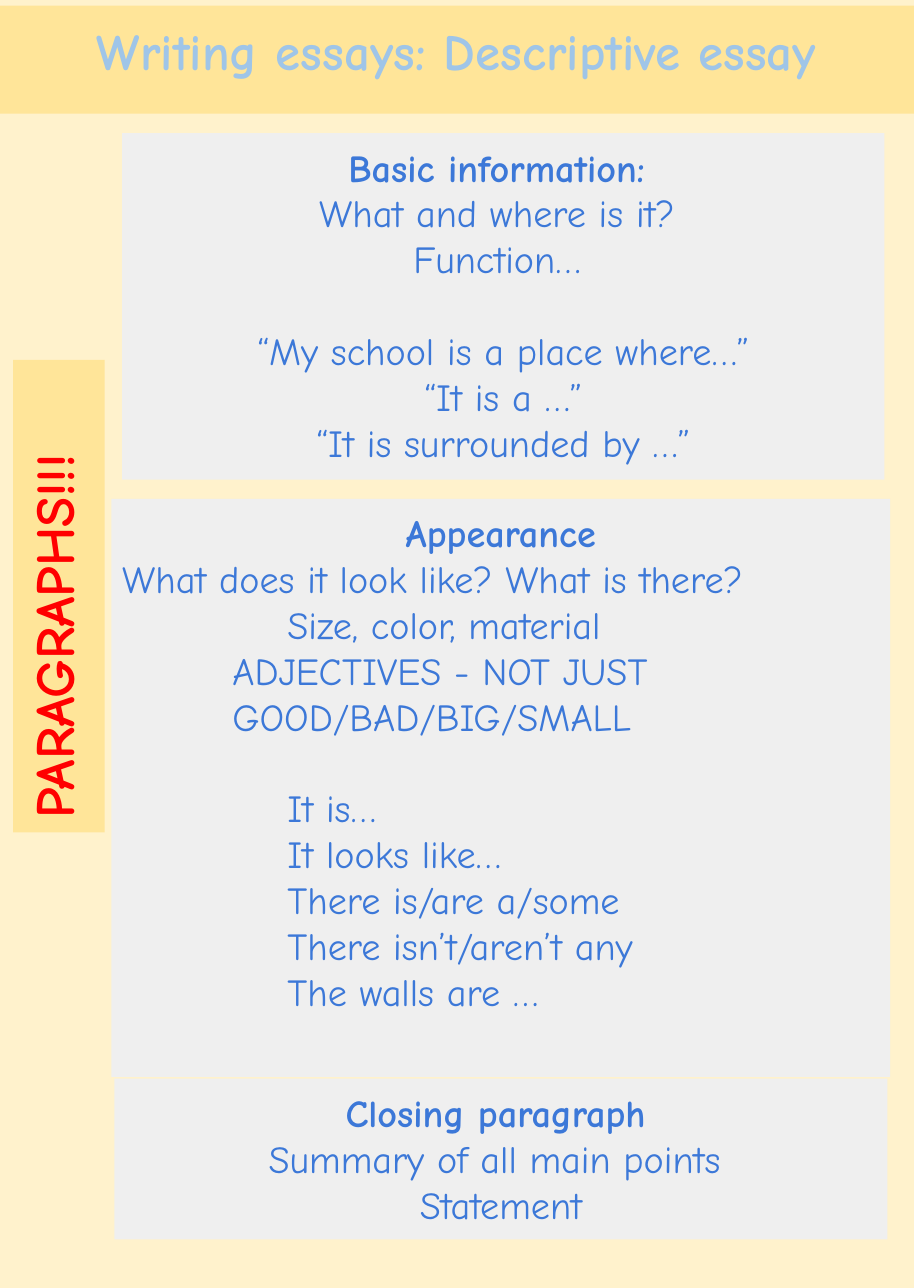
"""Build a one-page guide to writing a descriptive essay."""
import pptx
import pptx.dml.color
import pptx.enum.shapes
import pptx.enum.text
import pptx.util

Cm = pptx.util.Cm
Pt = pptx.util.Pt
RGBColor = pptx.dml.color.RGBColor
CENTER = pptx.enum.text.PP_ALIGN.CENTER
LEFT = pptx.enum.text.PP_ALIGN.LEFT

CREAM = RGBColor(0xFF, 0xF2, 0xCC)
YELLOW = RGBColor(0xFF, 0xE5, 0x99)
GREY = RGBColor(0xEF, 0xEF, 0xEF)
LIGHT_BLUE = RGBColor(0x9F, 0xC5, 0xE8)
BLUE = RGBColor(0x3C, 0x78, 0xD8)
RED = RGBColor(0xFF, 0x00, 0x00)

FONT = "Comic Neue"
BODY_SIZE = 25
BLANK_LINE = Pt(30)
TAB = Cm(1.27)


def fill_solid(shape, color):
    shape.fill.solid()
    shape.fill.fore_color.rgb = color


def set_frame(shape, inset):
    frame = shape.text_frame
    frame.word_wrap = True
    frame.auto_size = pptx.enum.text.MSO_AUTO_SIZE.NONE
    frame.vertical_anchor = pptx.enum.text.MSO_ANCHOR.TOP
    frame.margin_left = frame.margin_right = inset
    frame.margin_top = frame.margin_bottom = inset
    return frame


def add_run(paragraph, text, size, color, bold=False):
    run = paragraph.add_run()
    run.text = text
    run.font.name = FONT
    run.font.size = Pt(size)
    run.font.bold = bold
    run.font.color.rgb = color


def add_box(slide, box, color):
    rectangle = pptx.enum.shapes.MSO_SHAPE.RECTANGLE
    shape = slide.shapes.add_shape(rectangle, *map(Cm, box))
    shape.shadow.inherit = False
    shape.line.fill.background()
    fill_solid(shape, color)
    return shape


def add_title(slide, box, text):
    title = slide.shapes.title
    title.left, title.top, title.width, title.height = map(Cm, box)
    fill_solid(title, YELLOW)
    paragraph = set_frame(title, Cm(0.32)).paragraphs[0]
    paragraph.alignment = CENTER
    add_run(paragraph, text, 33.3, LIGHT_BLUE, bold=True)


def add_side_label(slide, box, text):
    label = add_box(slide, box, YELLOW)
    label.rotation = 270
    paragraph = set_frame(label, Cm(0.32)).paragraphs[0]
    paragraph.alignment = LEFT
    paragraph.line_spacing = 0.9
    add_run(paragraph, text, 36, RED, bold=True)


def add_panel(slide, box, lines):
    """Add a grey panel; each line is text, alignment, margin tabs, first-line tabs, gap before."""
    frame = set_frame(add_box(slide, box, GREY), Cm(0.25))
    for index, (text, alignment, margin, first, gap) in enumerate(lines):
        paragraph = frame.add_paragraph() if index else frame.paragraphs[0]
        paragraph.alignment = alignment
        properties = paragraph._p.get_or_add_pPr()
        properties.set("marL", str(margin * TAB))
        properties.set("indent", str(first * TAB))
        if gap:
            paragraph.space_before = BLANK_LINE
        for part_index, part in enumerate(text.split("\n")):
            if part_index:
                paragraph.add_line_break()
            add_run(paragraph, part, BODY_SIZE, BLUE, bold=index == 0)


def centered(text, gap=False):
    return text, CENTER, 0, 0, gap


def indented(text, margin=2, first=1, gap=False):
    return text, LEFT, margin, first, gap


def main():
    presentation = pptx.Presentation()
    presentation.slide_width = Cm(21.08)
    presentation.slide_height = Cm(29.72)
    slide = presentation.slides.add_slide(presentation.slide_layouts[5])
    slide.background.fill.solid()
    slide.background.fill.fore_color.rgb = CREAM

    add_title(slide, (0, 0.13, 21.08, 2.49), "Writing essays: Descriptive essay")
    add_panel(slide, (2.82, 3.07, 17.58, 8), [
        centered("Basic information: "),
        centered("What and where is it? "),
        centered("Function… "),
        centered("“My school is a place where…”", gap=True),
        centered("“It is a …”"),
        centered("“It is surrounded by …”"),
    ])
    add_panel(slide, (2.57, 11.51, 17.96, 13.34), [
        centered("Appearance"),
        indented("What does it look like? What is there?", margin=0, first=0),
        indented("Size, color, material"),
        indented("ADJECTIVES - NOT JUST\nGOOD/BAD/BIG/SMALL", first=0),
        indented("It is…", gap=True),
        indented("It looks like…"),
        indented("There is/are a/some"),
        indented("There isn’t/aren’t any"),
        indented("The walls are …"),
    ])
    add_panel(slide, (2.64, 24.89, 17.83, 3.71), [
        indented("Closing paragraph", margin=3),
        centered("Summary of all main points "),
        centered("Statement"),
    ])
    add_side_label(slide, (-4.09, 12.7, 10.9, 2.11), "PARAGRAPHS!!!")
    presentation.save("out.pptx")


if __name__ == "__main__":
    main()
